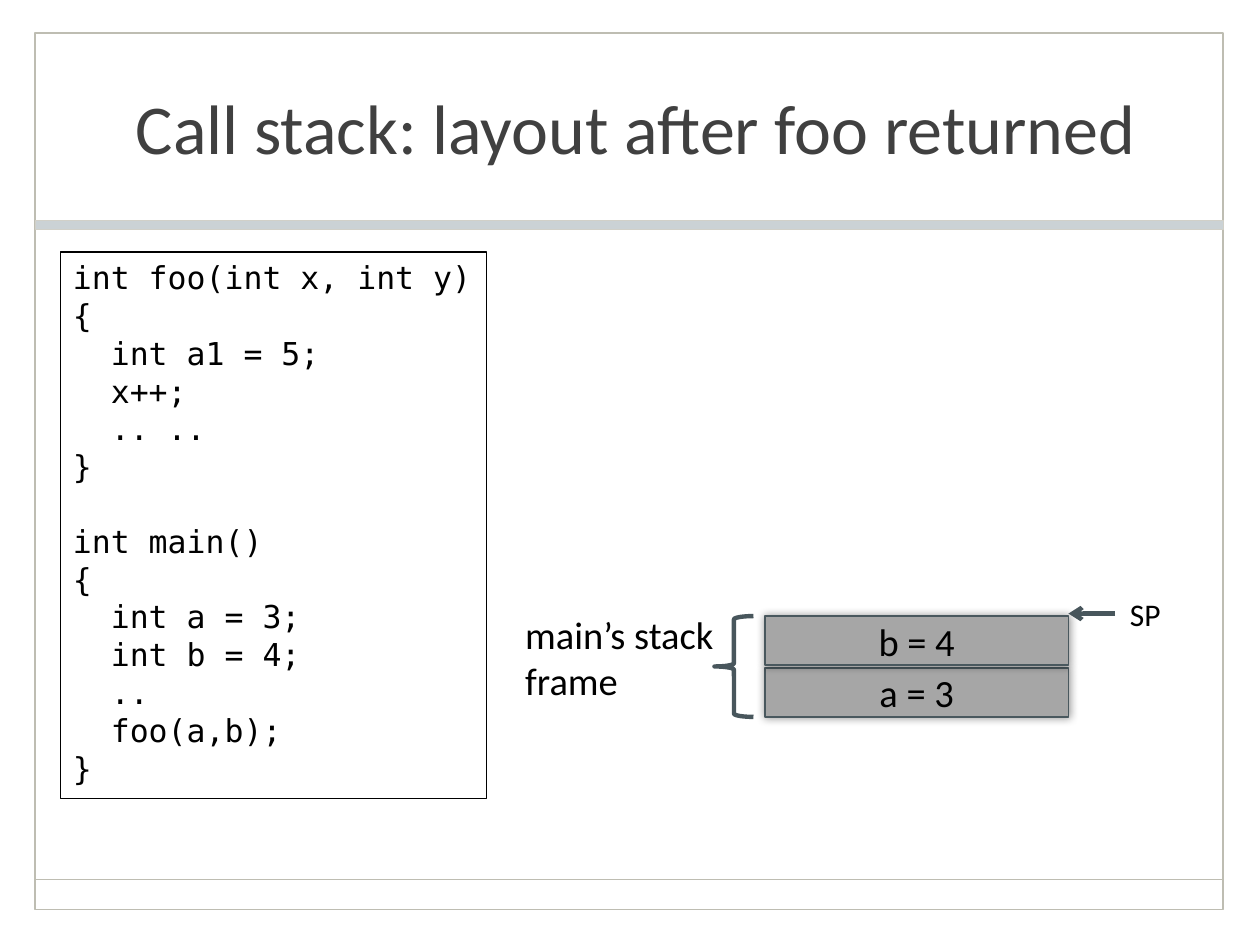
from lxml.etree import SubElement
from pptx import Presentation
from pptx.dml.color import RGBColor
from pptx.enum.shapes import MSO_CONNECTOR, MSO_SHAPE
from pptx.enum.text import MSO_ANCHOR, MSO_AUTO_SIZE, PP_ALIGN
from pptx.oxml.ns import qn
from pptx.util import Inches, Pt

TITLE = "Call stack: layout after foo returned"
FUNCTIONS = [
    ["int foo(int x, int y)", "{", "  int a1 = 5;", "  x++;", "  .. ..", "}"],
    ["int main()", "{", "  int a = 3;", "  int b = 4;", "  ..",
     "  foo(a,b);", "}"],
]
STACK = ["b = 4", "a = 3"]  # top of the stack first
FRAME_LABEL = ["main’s stack", "frame"]
POINTER_LABEL = "SP"

SANS, MONO = "Calibri", "DejaVu Sans Mono"
BORDER, INK = "BEBDB2", "48565C"
FRAME_X, FRAME_Y, FRAME_W, FRAME_H = 0.28, 0.26, 9.43, 6.96
CELL_X, CELL_W, CELL_H, PITCH = 6.07, 2.41, 0.39, 0.41
STACK_Y = 4.89
STACK_H = PITCH * (len(STACK) - 1) + CELL_H


def rgb(color):
    return RGBColor.from_string(color)


def set_line(shape, color, width):
    shape.line.color.rgb = rgb(color)
    shape.line.width = Pt(width)


def add_box(s, at, kind=MSO_SHAPE.RECTANGLE, fill=None, line=BORDER, width=1):
    sp = s.shapes.add_shape(kind, *map(Inches, at))
    sp.shadow.inherit = False
    if fill:
        sp.fill.solid()
        sp.fill.fore_color.rgb = rgb(fill)
    else:
        sp.fill.background()
    set_line(sp, line, width)
    return sp


def add_line(s, start, end, color, width):
    line = s.shapes.add_connector(
        MSO_CONNECTOR.STRAIGHT, *map(Inches, start + end))
    set_line(line, color, width)
    SubElement(line._element.spPr, qn("a:effectLst"))
    return line


def write(sp, lines, size, font=SANS, color="000000", align=PP_ALIGN.LEFT,
          anchor=MSO_ANCHOR.TOP, grow=False):
    tf = sp.text_frame
    tf.word_wrap = not grow
    tf.auto_size = MSO_AUTO_SIZE.SHAPE_TO_FIT_TEXT if grow else MSO_AUTO_SIZE.NONE
    tf.vertical_anchor = anchor
    for i, text in enumerate(lines):
        p = tf.add_paragraph() if i else tf.paragraphs[0]
        p.alignment = align
        r = p.add_run()
        r.text = text
        r.font.name, r.font.size = font, Pt(size)
        r.font.color.rgb = rgb(color)
    return tf


def add_text(s, at, lines, size, **style):
    return write(s.shapes.add_textbox(*map(Inches, at)), lines, size, **style)


def add_glow_shadow(sp):
    """Give the shape a soft shadow with no offset."""
    effects = sp._element.spPr.find(qn("a:effectLst"))
    shadow = SubElement(effects, qn("a:outerShdw"), blurRad=str(Pt(5)),
                        dist="0", dir="0", rotWithShape="0")
    color = SubElement(shadow, qn("a:srgbClr"), val="000000")
    SubElement(color, qn("a:alpha"), val="40000")


def add_frame(s):
    right = FRAME_X + FRAME_W
    add_box(s, (FRAME_X, FRAME_Y, FRAME_W, FRAME_H))
    add_line(s, (FRAME_X, 6.98), (right, 6.98), BORDER, 1)
    add_box(s, (FRAME_X, 1.75, FRAME_W, 0.07), fill="CBD2D5",
            line="D1D0C8", width=0.25)
    add_text(s, (0.48, 0.27, 9.13, 1.47), [TITLE], 40, color="404040",
             align=PP_ALIGN.CENTER, anchor=MSO_ANCHOR.MIDDLE)


def add_code(s):
    box = add_box(s, (0.48, 2, 3.38, 4.34), line="000000", width=0.75)
    tf = write(box, sum(FUNCTIONS, []), 18, font=MONO, grow=True)
    start = 0
    for function in FUNCTIONS[:-1]:
        start += len(function)
        tf.paragraphs[start].space_before = Pt(21)


def add_stack(s):
    for i, text in reversed(list(enumerate(STACK))):
        cell = add_box(s, (CELL_X, STACK_Y + i * PITCH, CELL_W, CELL_H),
                       fill="A6A6A6", line="49585E")
        add_glow_shadow(cell)
        write(cell, [text], 22, align=PP_ALIGN.CENTER, anchor=MSO_ANCHOR.MIDDLE)
    add_box(s, (CELL_X - 0.4, STACK_Y, 0.31, STACK_H),
            kind=MSO_SHAPE.LEFT_BRACE, line=INK, width=2.5)
    add_text(s, (4.07, 4.8, 1.78, 0.84), FRAME_LABEL, 22, grow=True)

    right, y = CELL_X + CELL_W, STACK_Y - 0.02
    arrow = add_line(s, (right + 0.37, y), (right, y), INK, 2.5)
    SubElement(arrow.line._get_or_add_ln(), qn("a:tailEnd"), type="arrow")
    add_text(s, (right + 0.39, y - 0.2, 0.5, 0.4), [POINTER_LABEL], 18, grow=True)


def main():
    prs = Presentation()
    prs.slide_width, prs.slide_height = Inches(10), Inches(7.5)
    s = prs.slides.add_slide(prs.slide_layouts[6])
    add_frame(s)
    add_code(s)
    add_stack(s)
    prs.save("out.pptx")


if __name__ == "__main__":
    main()
